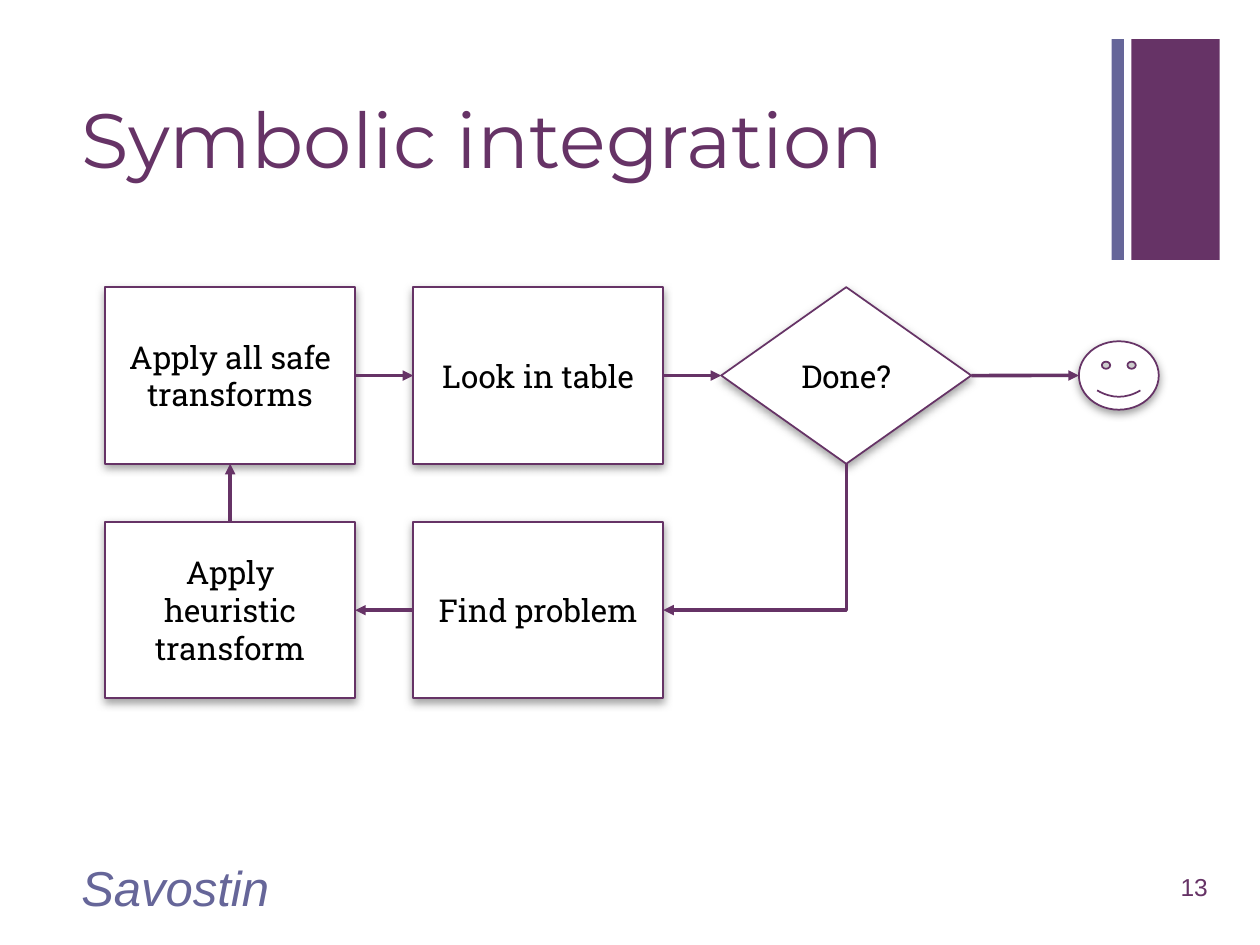
import pptx
import pptx.util
import pptx.dml.color
import pptx.oxml
import pptx.oxml.ns
from pptx.enum.shapes import MSO_CONNECTOR, MSO_SHAPE
from pptx.enum.text import MSO_ANCHOR, PP_ALIGN

Cm, Pt = pptx.util.Cm, pptx.util.Pt
TOP, LEFT, BOTTOM, RIGHT = range(4)

NS = pptx.oxml.ns.nsdecls("a")
SHADOW = (f'<a:effectLst {NS}><a:outerShdw blurRad="{Pt(5)}" dist="{Pt(2)}" '
          'dir="5400000" algn="ctr" rotWithShape="0"><a:srgbClr val="808080">'
          '<a:alpha val="75000"/></a:srgbClr></a:outerShdw></a:effectLst>')
NO_EFFECT = f"<a:effectLst {NS}/>"
ARROWHEAD = f'<a:tailEnd {NS} type="triangle"/>'


def color(hex_string):
    return pptx.dml.color.RGBColor.from_string(hex_string)


class SlideBuilder:
    PURPLE, BLUE, WHITE, BLACK = "663366", "666699", "FFFFFF", "000000"
    HEADING, BODY, PLAIN = "Montserrat", "Roboto Slab", "Arial"

    def __init__(self, slide):
        self.s = slide

    def format_text(self, sp, text, font, size, hex_color,
                    align=PP_ALIGN.LEFT, italic=False):
        tf = sp.text_frame
        tf.word_wrap = True
        tf.vertical_anchor = MSO_ANCHOR.MIDDLE
        p = tf.paragraphs[0]
        p.text = text
        p.alignment = align
        p.font.name, p.font.size = font, Pt(size)
        p.font.color.rgb = color(hex_color)
        p.font.italic = italic
        return p

    def title(self, text, x, y, w, h):
        sp = self.s.shapes.title
        sp.left, sp.top, sp.width, sp.height = Cm(x), Cm(y), Cm(w), Cm(h)
        p = self.format_text(sp, text, self.HEADING, 44, self.PURPLE)
        p.line_spacing = 0.9

    def label(self, text, x, y, w, h, size, hex_color, **style):
        sp = self.s.shapes.add_textbox(Cm(x), Cm(y), Cm(w), Cm(h))
        self.format_text(sp, text, self.PLAIN, size, hex_color, **style)

    def bar(self, x, y, w, h, hex_color):
        sp = self.s.shapes.add_shape(MSO_SHAPE.RECTANGLE, Cm(x), Cm(y), Cm(w), Cm(h))
        sp.shadow.inherit = False
        sp.fill.solid()
        sp.fill.fore_color.rgb = color(hex_color)
        sp.line.fill.background()

    def node(self, kind, x, y, w, h, text=None):
        sp = self.s.shapes.add_shape(kind, Cm(x), Cm(y), Cm(w), Cm(h))
        sp.fill.solid()
        sp.fill.fore_color.rgb = color(self.WHITE)
        sp.line.color.rgb = color(self.PURPLE)
        sp.line.width = Pt(1)
        sp._element.spPr.append(pptx.oxml.parse_xml(SHADOW))
        if text:
            self.format_text(sp, text, self.BODY, 18, self.BLACK, PP_ALIGN.CENTER)
        return sp

    def arrow(self, start, start_site, end, end_site=None,
              kind=MSO_CONNECTOR.STRAIGHT):
        """Without an end site the arrow stops, unjoined, at end's left middle."""
        c = self.s.shapes.add_connector(kind, 0, 0, 0, 0)
        c.begin_connect(start, start_site)
        if end_site is None:
            c.end_x, c.end_y = end.left, end.top + end.height // 2
        else:
            c.end_connect(end, end_site)
        c.line.color.rgb = color(self.PURPLE)
        c.line.width = Pt(2)
        c.line._get_or_add_ln().append(pptx.oxml.parse_xml(ARROWHEAD))
        c._element.spPr.append(pptx.oxml.parse_xml(NO_EFFECT))
        return c

    def corner_arrow(self, start, end):
        """Arrow going down from start, then left into end."""
        c = self.arrow(start, BOTTOM, end, RIGHT, MSO_CONNECTOR.ELBOW)
        x1, y1 = start.left + start.width // 2, start.top + start.height
        x2, y2 = end.left + end.width, end.top + end.height // 2
        # A quarter turn swaps width and height around the centre
        w, h = y2 - y1, x1 - x2
        spPr = c._element.spPr
        spPr.prstGeom.set("prst", "bentConnector2")
        xfrm = spPr.xfrm
        for name in ("flipH", "flipV"):
            xfrm.attrib.pop(name, None)
        xfrm.set("rot", "5400000")
        c.left, c.top = (x1 + x2 - w) // 2, (y1 + y2 - h) // 2
        c.width, c.height = w, h


def main():
    prs = pptx.Presentation()
    prs.slide_width, prs.slide_height = Cm(25.4), Cm(19.05)
    b = SlideBuilder(prs.slides.add_slide(prs.slide_layouts[5]))

    # Corner bars, title and footer
    b.bar(22.81, 0.79, 1.78, 4.45, b.PURPLE)
    b.bar(22.41, 0.79, 0.25, 4.45, b.BLUE)
    b.title("Symbolic integration", 1.39, 1.35, 20.98, 3.1)
    b.label("13", 23.05, 17.36, 1.55, 1.02, 14, b.PURPLE, align=PP_ALIGN.RIGHT)
    b.label("Savostin", 1.39, 17.36, 17.02, 1.02, 28, b.BLUE, italic=True)

    # Flow chart nodes on a grid of equal cells
    x0, y0, w, h, gap = 2.12, 5.79, 5.04, 3.56, 1.17

    def cell(kind, col, row, text):
        return b.node(kind, x0 + col * (w + gap), y0 + row * (h + gap), w, h, text)

    rect = MSO_SHAPE.RECTANGLE
    safe = cell(rect, 0, 0, "Apply all safe transforms")
    table = cell(rect, 1, 0, "Look in table")
    done = cell(MSO_SHAPE.DIAMOND, 2, 0, "Done?")
    problem = cell(rect, 1, 1, "Find problem")
    heuristic = cell(rect, 0, 1, "Apply heuristic transform")
    face_h = 1.38
    smiley = b.node(MSO_SHAPE.SMILEY_FACE, 21.75, y0 + (h - face_h) / 2, 1.61, face_h)

    # Arrows
    b.arrow(safe, RIGHT, table, LEFT)
    b.arrow(table, RIGHT, done, LEFT)
    b.arrow(done, RIGHT, smiley)
    b.corner_arrow(done, problem)
    b.arrow(problem, LEFT, heuristic, RIGHT)
    b.arrow(heuristic, TOP, safe, BOTTOM)

    prs.save("out.pptx")


if __name__ == "__main__":
    main()
